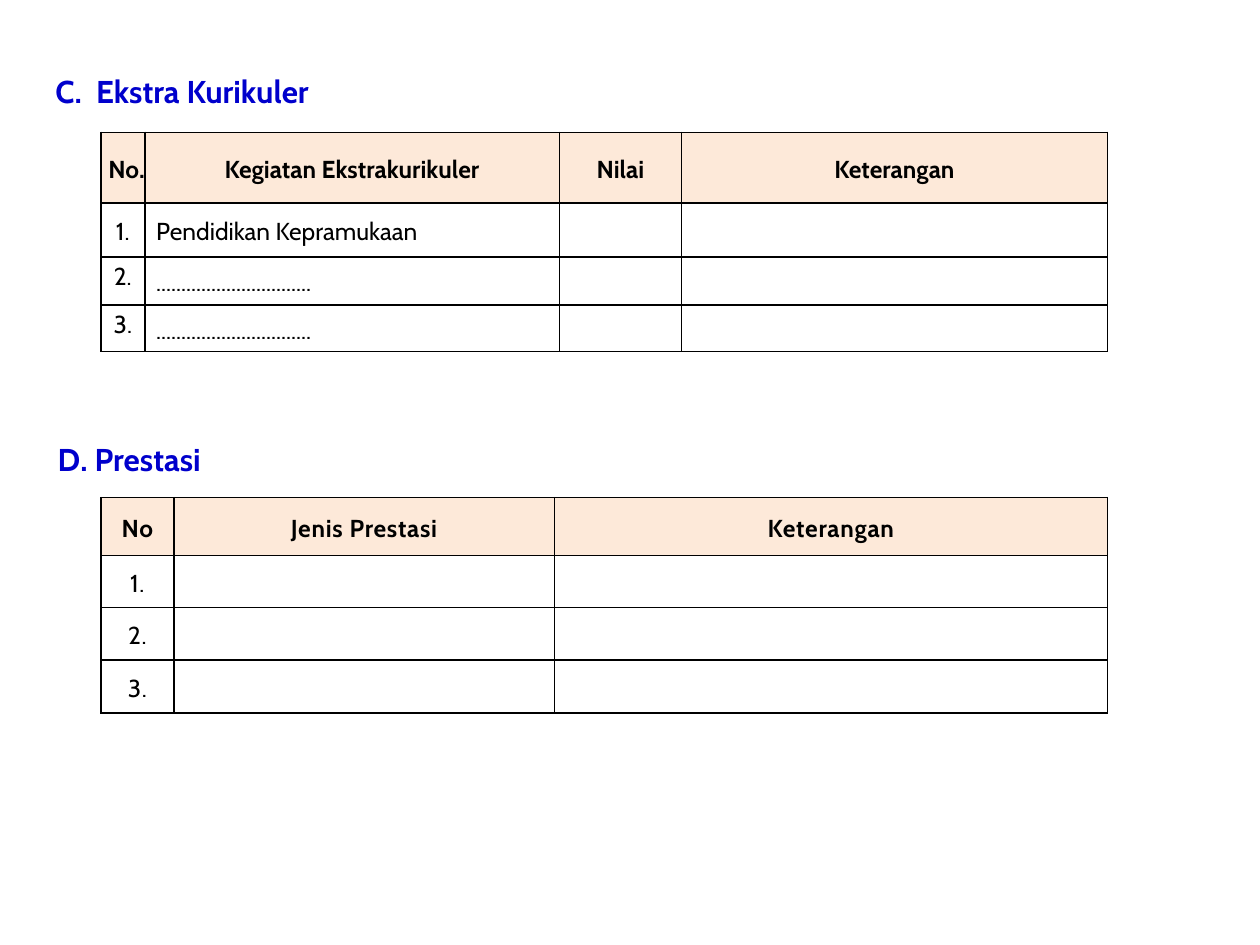
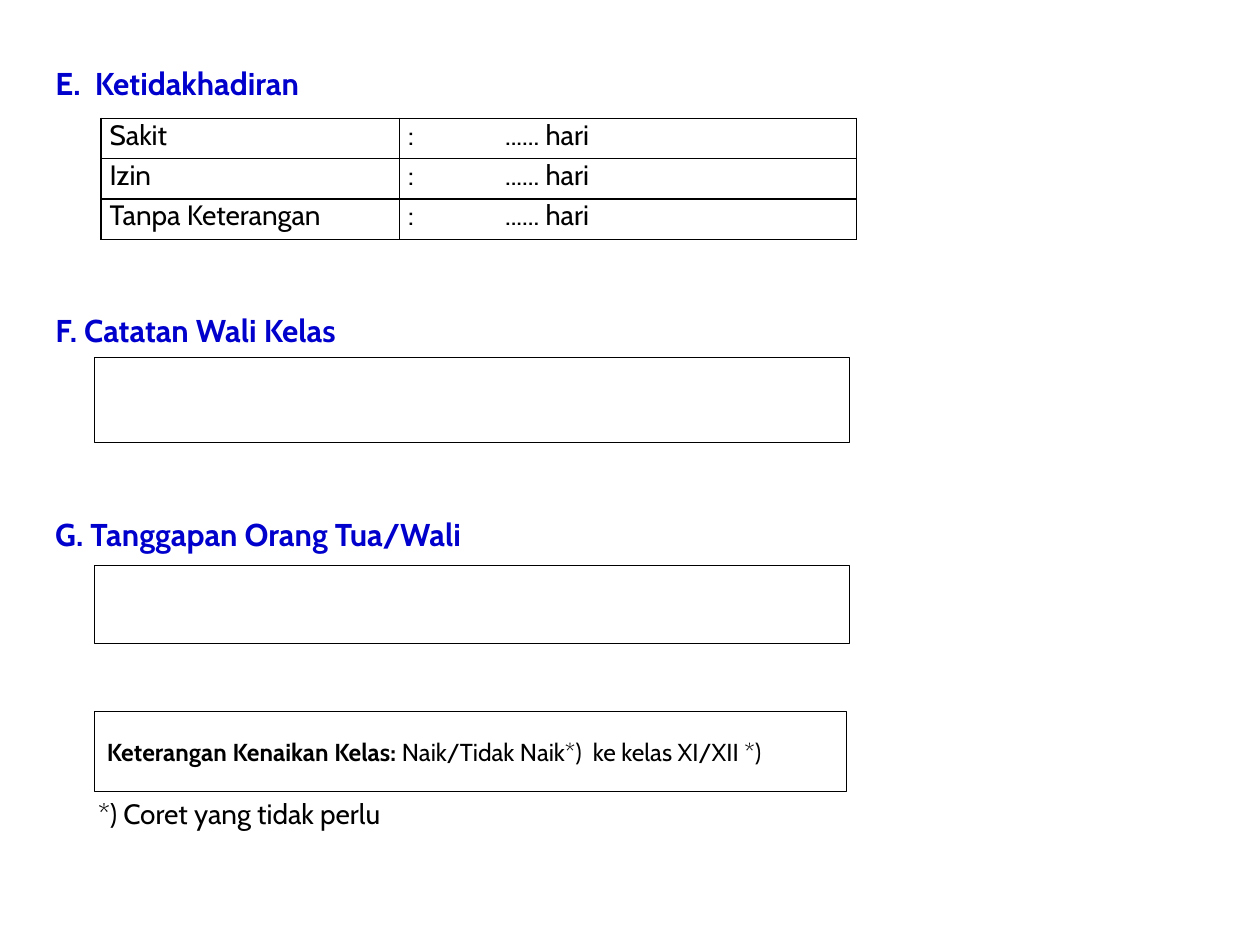
import pptx
import pptx.util
import pptx.dml.color
import pptx.enum.shapes
import pptx.enum.text
import pptx.oxml.ns
from lxml import etree

Inches = pptx.util.Inches
Pt = pptx.util.Pt
Align = pptx.enum.text.PP_ALIGN
Anchor = pptx.enum.text.MSO_ANCHOR
qn = pptx.oxml.ns.qn


class Deck:
    hues = {"head": "0000CC", "ink": "000000", "band": "FDE9D9", "paper": "FFFFFF"}
    face = "Cabin"

    def __init__(self):
        self.prs = pptx.Presentation()
        self.prs.slide_width = Inches(10)
        self.prs.slide_height = Inches(7.5)

    def hue(self, name):
        return pptx.dml.color.RGBColor.from_string(self.hues[name])

    def style(self, font, size, bold=False, hue="ink"):
        font.name = self.face
        font.size = Pt(size)
        font.bold = bold
        font.color.rgb = self.hue(hue)

    def label(self, frame, text, size, bold=False, hue="ink", wrap=True):
        frame.word_wrap = wrap
        frame.auto_size = pptx.enum.text.MSO_AUTO_SIZE.NONE
        frame.vertical_anchor = Anchor.TOP
        frame.text = text
        para = frame.paragraphs[0]
        para.alignment = Align.LEFT
        self.style(para.font, size, bold, hue)

    def page(self, title, top):
        self.slide = self.prs.slides.add_slide(self.prs.slide_layouts[5])
        box = self.slide.shapes.title
        box.left, box.top = Inches(0.34), Inches(top)
        box.width, box.height = Inches(3.03), Inches(0.4)
        self.label(box.text_frame, title, 18, True, "head")

    def text(self, text, left, top, width, height=0.4, **look):
        box = self.slide.shapes.add_textbox(
            Inches(left), Inches(top), Inches(width), Inches(height))
        self.label(box.text_frame, text, **look)

    def head(self, text, left, top, width):
        self.text(text, left, top, width, size=18, bold=True, hue="head")

    def box(self, top, width, height, line=0.5):
        shape = self.slide.shapes.add_shape(
            pptx.enum.shapes.MSO_SHAPE.RECTANGLE,
            Inches(0.75), Inches(top), Inches(width), Inches(height))
        shape.shadow.inherit = False
        shape.fill.solid()
        shape.fill.fore_color.rgb = self.hue("paper")
        shape.line.color.rgb = self.hue("ink")
        shape.line.width = Pt(line)
        return shape

    def edge(self, cell, hidden=""):
        props = cell._tc.get_or_add_tcPr()
        for side in "LRTB":
            line = etree.SubElement(props, qn(f"a:ln{side}"), w=str(Pt(1)))
            if side in hidden:
                etree.SubElement(line, qn("a:noFill"))
            else:
                fill = etree.SubElement(line, qn("a:solidFill"))
                etree.SubElement(fill, qn("a:srgbClr"), val=self.hues["ink"])

    def table(self, top, cols, rows, texts, size=14, inset=0.0, lead=1.15,
              band=True, mid=True, left=(), pads={}, tops=(), bare={}, space=0):
        grid = self.slide.shapes.add_table(
            len(rows), len(cols), Inches(0.8), Inches(top),
            Inches(sum(cols)), Inches(sum(rows))).table
        grid.first_row = grid.horz_banding = False
        for col, width in zip(grid.columns, cols):
            col.width = Inches(width)
        for r, (row, height) in enumerate(zip(grid.rows, rows)):
            row.height = Inches(height)
            for c, cell in enumerate(row.cells):
                top_row = band and r == 0
                self.edge(cell, bare.get(c, ""))
                if top_row:
                    cell.fill.solid()
                    cell.fill.fore_color.rgb = self.hue("band")
                else:
                    cell.fill.background()
                cell.margin_left = Inches(pads.get((top_row, c), inset))
                cell.margin_right = Inches(inset)
                cell.margin_top = cell.margin_bottom = 0
                high = not mid or (r, c) in tops
                cell.vertical_anchor = Anchor.TOP if high else Anchor.MIDDLE
                cell.text = texts[r][c]
                para = cell.text_frame.paragraphs[0]
                para.line_spacing = lead
                flush = c in left and not top_row
                para.alignment = Align.LEFT if flush else Align.CENTER
                self.style(para.font, size, top_row)
                if space:
                    para.font._element.set("spc", str(space))


def main():
    deck = Deck()

    deck.page("C.  Ekstra Kurikuler", 0.52)
    dots = "." * 31
    deck.table(
        1.05, [0.35, 3.29, 0.97, 3.38], [0.56, 0.43, 0.38, 0.37],
        [["No.", "Kegiatan Ekstrakurikuler", "Nilai", "Keterangan"],
         ["1.", "Pendidikan Kepramukaan", "", ""],
         ["2.", dots, "", ""],
         ["3.", dots, "", ""]],
        left=(1,), pads={(True, 0): 0.06, (False, 1): 0.09},
        tops=((2, 0), (3, 0)))
    deck.head("D. Prestasi", 0.36, 3.44, 2.07)
    deck.table(
        3.95, [0.58, 3.02, 4.39], [0.46, 0.41, 0.42, 0.42],
        [["No", "Jenis Prestasi", "Keterangan"]]
        + [[f"{n}.", "", ""] for n in range(1, 4)],
        inset=0.07, space=40)

    deck.page("E.  Ketidakhadiran", 0.46)
    causes = ["Sakit", "Izin", "Tanpa Keterangan"]
    deck.table(
        0.94, [2.37, 0.52, 3.11], [0.32] * 3,
        [[cause, ":", "...... hari"] for cause in causes],
        size=16, inset=0.07, lead=1.0, band=False, mid=False,
        left=(0, 1, 2), pads={(False, 2): 0.32}, bare={1: "R", 2: "L"})
    deck.head("F. Catatan Wali Kelas", 0.34, 2.42, 3.09)
    deck.box(2.84, 5.99, 0.67)
    deck.head("G. Tanggapan Orang Tua/Wali", 0.34, 4.04, 4.2)
    deck.box(4.49, 5.99, 0.62)

    frame = deck.box(5.65, 5.97, 0.63, 0.75).text_frame
    frame.word_wrap = True
    frame.vertical_anchor = Anchor.MIDDLE
    para = frame.paragraphs[0]
    para.alignment = Align.LEFT
    for text, bold in (("Keterangan Kenaikan Kelas: ", True),
                       ("Naik/Tidak Naik*)  ke kelas XI/XII *)", False)):
        run = para.add_run()
        run.text = text
        deck.style(run.font, 14, bold)
    deck.text("*) Coret yang tidak perlu", 0.68, 6.27, 2.6, 0.37, size=16, wrap=False)

    deck.prs.save("out.pptx")


if __name__ == "__main__":
    main()
